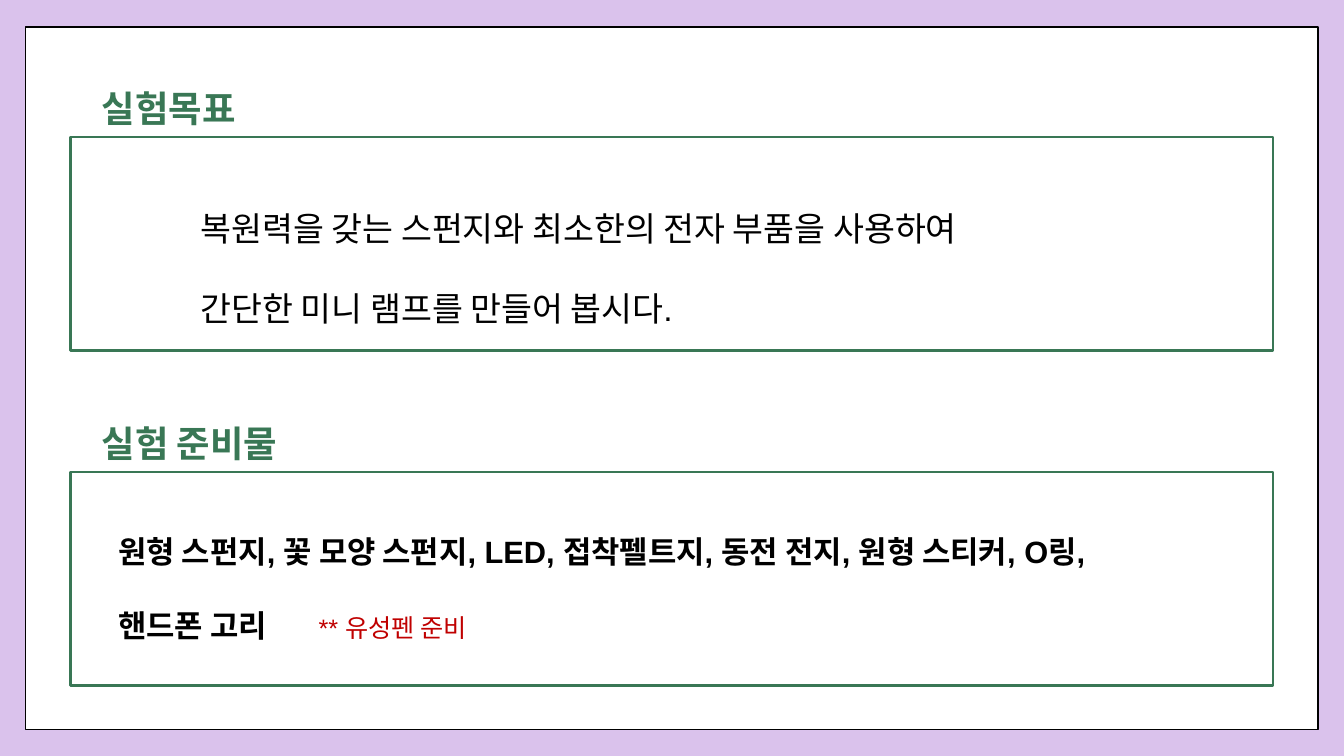
from dataclasses import dataclass

import pptx
import pptx.dml.color
import pptx.oxml.ns
import pptx.util
from lxml import etree
from pptx.enum.shapes import MSO_SHAPE

Pt = pptx.util.Pt
Color = pptx.dml.color.RGBColor.from_string


@dataclass(frozen=True)
class Theme:
    background: str = "DAC2EC"
    paper: str = "FFFFFF"
    ink: str = "000000"
    green: str = "397755"
    red: str = "C00000"
    heading_font: str = "Cabin"
    body_font: str = "Arial"
    heading_size: int = 26
    goal_size: int = 24
    materials_size: int = 22
    note_size: int = 18


THEME = Theme()


def add_frame(slide, box, line_color, line_width):
    shape = slide.shapes.add_shape(MSO_SHAPE.RECTANGLE, *map(Pt, box))
    shape.shadow.inherit = False
    shape.fill.solid()
    shape.fill.fore_color.rgb = Color(THEME.paper)
    shape.line.color.rgb = Color(line_color)
    shape.line.width = Pt(line_width)


def add_text(slide, box, lines, font, size, color, bold=False, spacing=1.0, inset=7.2):
    """Add one paragraph per line and return the paragraphs."""
    frame = slide.shapes.add_textbox(*map(Pt, box)).text_frame
    frame.word_wrap = True
    frame.margin_left = frame.margin_right = Pt(7.2)
    frame.margin_top = frame.margin_bottom = Pt(inset)
    for index, line in enumerate(lines):
        paragraph = frame.add_paragraph() if index else frame.paragraphs[0]
        paragraph.add_run().text = line
        paragraph.line_spacing = spacing
        paragraph.font.name = font
        paragraph.font.size = Pt(size)
        paragraph.font.bold = bold
        paragraph.font.color.rgb = Color(color)
    return frame.paragraphs


def add_tabbed_note(paragraph, text, tab_position):
    """Append a red note that starts at a tab stop."""
    qn = pptx.oxml.ns.qn
    properties = paragraph._p.get_or_add_pPr()
    tabs = etree.Element(qn("a:tabLst"))
    etree.SubElement(tabs, qn("a:tab"), pos=str(int(Pt(tab_position))), algn="l")
    properties.find(qn("a:defRPr")).addprevious(tabs)
    run = paragraph.add_run()
    run.text = "\t" + text
    run.font.size = Pt(THEME.note_size)
    run.font.bold = False
    run.font.color.rgb = Color(THEME.red)


def add_section(slide, box, heading):
    left, top, width, height = box
    add_text(slide, (left + 15.1, top - 43.5, 166, 34.5), [heading],
             THEME.heading_font, THEME.heading_size, THEME.green, bold=True)
    add_frame(slide, box, THEME.green, 1.75)


def add_goal(slide, box):
    left, top, width, height = box
    add_section(slide, box, "실험목표")
    add_text(slide, (left + 85.7, top + 18, width - 110, height - 38),
             ["복원력을 갖는 스펀지와 최소한의 전자 부품을 사용하여",
              "간단한 미니 램프를 만들어 봅시다."],
             THEME.body_font, THEME.goal_size, THEME.ink, spacing=2.0, inset=3.6)


def add_materials(slide, box):
    left, top, width, height = box
    add_section(slide, box, "실험 준비물")
    paragraphs = add_text(
        slide, (left + 27, top + 13.7, width - 35, height - 47.5),
        ["원형 스펀지, 꽃 모양 스펀지, LED, 접착펠트지, 동전 전지, 원형 스티커, O링,",
         "핸드폰 고리"],
        THEME.body_font, THEME.materials_size, THEME.ink, bold=True, spacing=2.0, inset=3.6)
    add_tabbed_note(paragraphs[-1], "** 유성펜 준비", 143)


def main():
    presentation = pptx.Presentation()
    presentation.slide_width, presentation.slide_height = Pt(960), Pt(540)
    slide = presentation.slides.add_slide(presentation.slide_layouts[6])
    slide.background.fill.solid()
    slide.background.fill.fore_color.rgb = Color(THEME.background)
    add_frame(slide, (18.2, 19.3, 923.2, 502), THEME.ink, 1)
    add_goal(slide, (50.5, 97.8, 859, 152.6))
    add_materials(slide, (50.5, 337.2, 859, 152.6))
    presentation.save("out.pptx")


if __name__ == "__main__":
    main()
